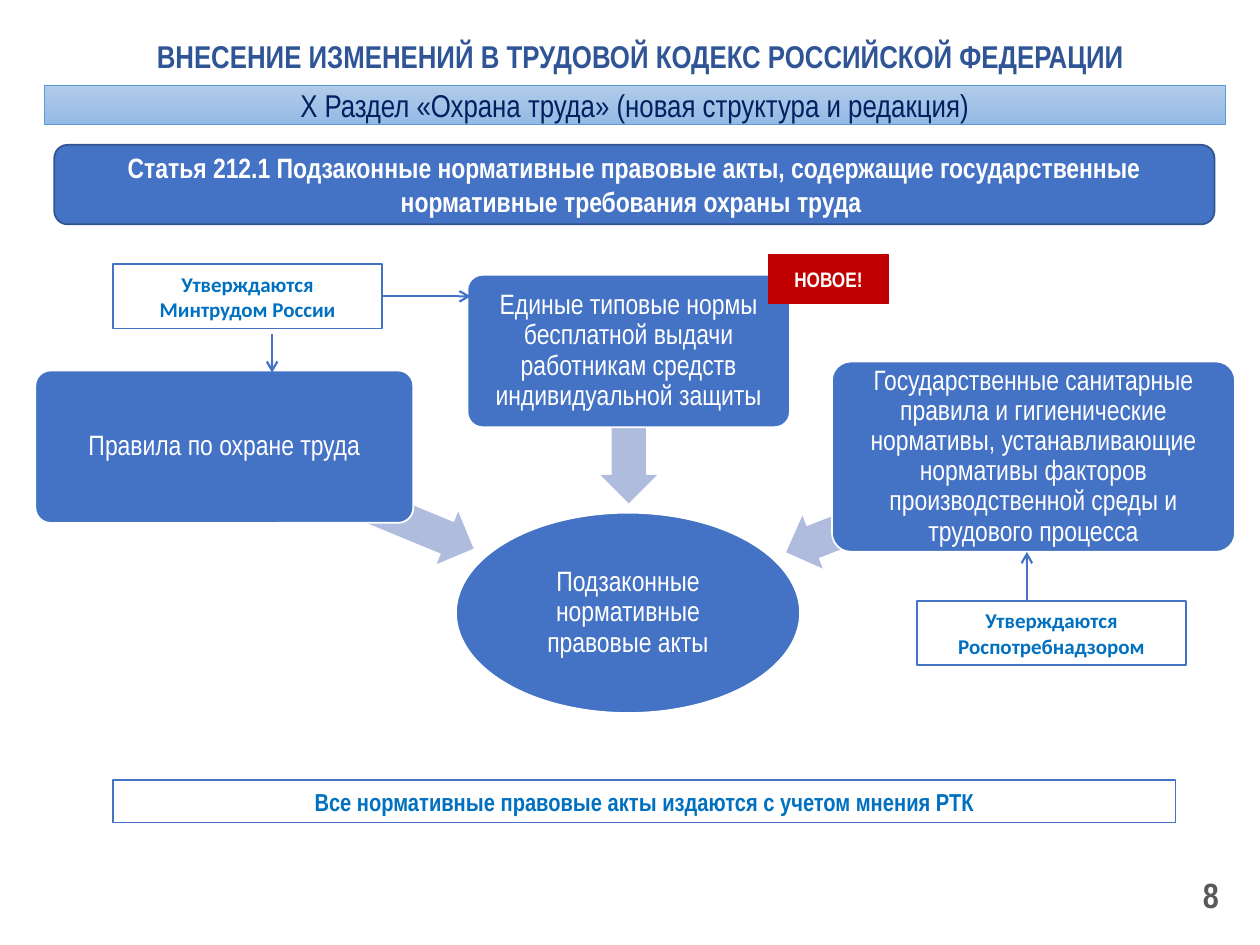
from lxml import etree
from pptx import Presentation
from pptx.dml.color import RGBColor
from pptx.enum.shapes import MSO_CONNECTOR, MSO_SHAPE
from pptx.enum.text import MSO_ANCHOR, PP_ALIGN
from pptx.oxml.ns import qn
from pptx.util import Pt

RECTANGLE = MSO_SHAPE.RECTANGLE
ROUNDED = MSO_SHAPE.ROUNDED_RECTANGLE
ELLIPSE = MSO_SHAPE.OVAL
LEFT_ARROW = MSO_SHAPE.LEFT_ARROW
STRAIGHT = MSO_CONNECTOR.STRAIGHT
MIDDLE = MSO_ANCHOR.MIDDLE
CENTER, RIGHT = PP_ALIGN.CENTER, PP_ALIGN.RIGHT
TITLE_ONLY = 5
RIGHT_SIDE = 3

COLORS = {
    "blue": "4472C4", "dark blue": "325491", "title": "2F5597",
    "navy": "002060", "note": "0070C0", "arrow": "B0BCDE",
    "band top": "B1CBE9", "band bottom": "93B9E4", "band line": "5B9BD5",
    "red": "C00000", "white": "FFFFFF", "gray": "595959",
}


def rgb(name):
    return RGBColor.from_string(COLORS[name])


class SlideBuilder:
    font = "Arial Narrow"

    def __init__(self, slide):
        self.slide = slide

    def label(self, shape, text, color, size, bold=False, font=None,
              align=CENTER, spacing=1.0, insets=(7.2, 3.6)):
        frame = shape.text_frame
        horizontal, vertical = map(Pt, insets)
        frame_format = {
            "word_wrap": True, "vertical_anchor": MIDDLE,
            "margin_left": horizontal, "margin_right": horizontal,
            "margin_top": vertical, "margin_bottom": vertical,
        }
        paragraph = frame.paragraphs[0]
        run = paragraph.add_run()
        run.text = text
        formats = (
            (frame, frame_format),
            (paragraph, {"alignment": align, "line_spacing": spacing}),
            (run.font, {"name": font or self.font, "size": Pt(size), "bold": bold}),
        )
        for target, values in formats:
            for name, value in values.items():
                setattr(target, name, value)
        run.font.color.rgb = rgb(color)

    def title(self, box, text, **style):
        shape = self.slide.shapes.title
        for name, value in zip(("left", "top", "width", "height"), box):
            setattr(shape, name, Pt(value))
        self.label(shape, text, **style)

    def text(self, box, text, **style):
        shape = self.slide.shapes.add_textbox(*map(Pt, box))
        self.label(shape, text, **style)

    def shape(self, kind, box, fill, line=None, line_width=1, adjustments=(), rotation=0):
        shape = self.slide.shapes.add_shape(kind, *map(Pt, box))
        shape.shadow.inherit = False
        shape.rotation = rotation
        for index, value in enumerate(adjustments):
            shape.adjustments[index] = value
        if isinstance(fill, tuple):
            shape.fill.gradient()
            shape.fill.gradient_angle = 270
            for stop, color in zip(shape.fill.gradient_stops, fill):
                stop.color.rgb = rgb(color)
        else:
            shape.fill.solid()
            shape.fill.fore_color.rgb = rgb(fill)
        if line:
            shape.line.color.rgb = rgb(line)
            shape.line.width = Pt(line_width)
        else:
            shape.line.fill.background()
        return shape

    def arrow(self, start, end, source=None):
        connector = self.slide.shapes.add_connector(STRAIGHT, *map(Pt, start + end))
        if source is not None:
            connector.begin_connect(source, RIGHT_SIDE)
        connector.line.color.rgb = rgb("blue")
        connector.line.width = Pt(1.25)
        properties = connector.element.spPr
        etree.SubElement(properties.find(qn("a:ln")), qn("a:tailEnd"), type="arrow")
        etree.SubElement(properties, qn("a:effectLst"))


def main():
    presentation = Presentation()
    presentation.slide_width, presentation.slide_height = Pt(720), Pt(540)
    layout = presentation.slide_layouts[TITLE_ONLY]
    builder = SlideBuilder(presentation.slides.add_slide(layout))

    # Heading and slide number
    builder.title((60, 9.5, 612, 45),
                  "ВНЕСЕНИЕ ИЗМЕНЕНИЙ В ТРУДОВОЙ КОДЕКС РОССИЙСКОЙ ФЕДЕРАЦИИ",
                  color="title", size=18, bold=True)
    builder.text((535.5, 497, 168, 28.8), "8",
                 color="gray", size=20, bold=True, align=RIGHT)

    # Section band and article banner
    band = builder.shape(RECTANGLE, (25.2, 48.8, 675, 22.6),
                         ("band top", "band bottom"), "band line", 0.5)
    builder.label(band, "Х Раздел «Охрана труда» (новая структура и редакция)",
                  color="navy", size=18)
    article = builder.shape(ROUNDED, (31, 82.8, 663, 45.4), "blue", "dark blue")
    builder.label(article, "Статья 212.1 Подзаконные нормативные правовые акты, "
                  "содержащие государственные нормативные требования охраны труда ",
                  color="white", size=16, bold=True)

    # Block arrows pointing at the hub
    for box, rotation in (
        ((121.7, 267.8, 154.8, 32.4), 202.4),
        ((315.4, 227.5, 87.8, 32.4), 270),
        ((444.2, 272.2, 151.2, 32.4), 338.9),
    ):
        builder.shape(LEFT_ARROW, box, "arrow", adjustments=(0.6, 0.5), rotation=rotation)

    # Hub and the three kinds of acts
    for kind, box, text, adjustments, inset in (
        (ELLIPSE, (260.6, 293, 196.6, 114.5),
         "Подзаконные нормативные правовые акты", (), 0.8),
        (ROUNDED, (20.2, 211.7, 216, 87.1), "Правила по охране труда", (0.1,), 2.4),
        (ROUNDED, (267.1, 157, 184.3, 87.1),
         "Единые типовые нормы бесплатной выдачи работникам средств "
         "индивидуальной защиты", (0.1,), 2.4),
        (ROUNDED, (475.4, 206.6, 230.4, 108.7),
         "Государственные санитарные правила и гигиенические нормативы, "
         "устанавливающие нормативы факторов производственной среды и "
         "трудового процесса", (0.1,), 2.4),
    ):
        node = builder.shape(kind, box, "blue", "white", adjustments=adjustments)
        builder.label(node, text, color="white", size=16, spacing=0.9,
                      insets=(inset, inset))

    # Approving bodies
    approvers = []
    for box, text in (
        ((64.8, 151, 153.4, 36.7), "Утверждаются Минтрудом России"),
        ((524.2, 343.6, 153.4, 36.3), "Утверждаются Роспотребнадзором"),
    ):
        approver = builder.shape(RECTANGLE, box, "white", "blue")
        builder.label(approver, text, color="note", size=12, bold=True, font="Calibri")
        approvers.append(approver)
    builder.arrow((218.2, 169.35), (269, 169.35), source=approvers[0])
    builder.arrow((155.5, 190.8), (155.5, 213))
    builder.arrow((586.8, 343.6), (586.8, 315.4))

    # Closing note and "new" mark
    note = builder.shape(RECTANGLE, (64.8, 445.7, 607, 24.3), "white", "blue")
    builder.label(note, "Все нормативные правовые акты издаются с учетом мнения РТК",
                  color="note", size=14, bold=True)
    mark = builder.shape(RECTANGLE, (439.2, 145.4, 68.4, 28.1), "red", "red")
    builder.label(mark, "НОВОЕ!", color="white", size=12, bold=True)

    presentation.save("out.pptx")


if __name__ == "__main__":
    main()
